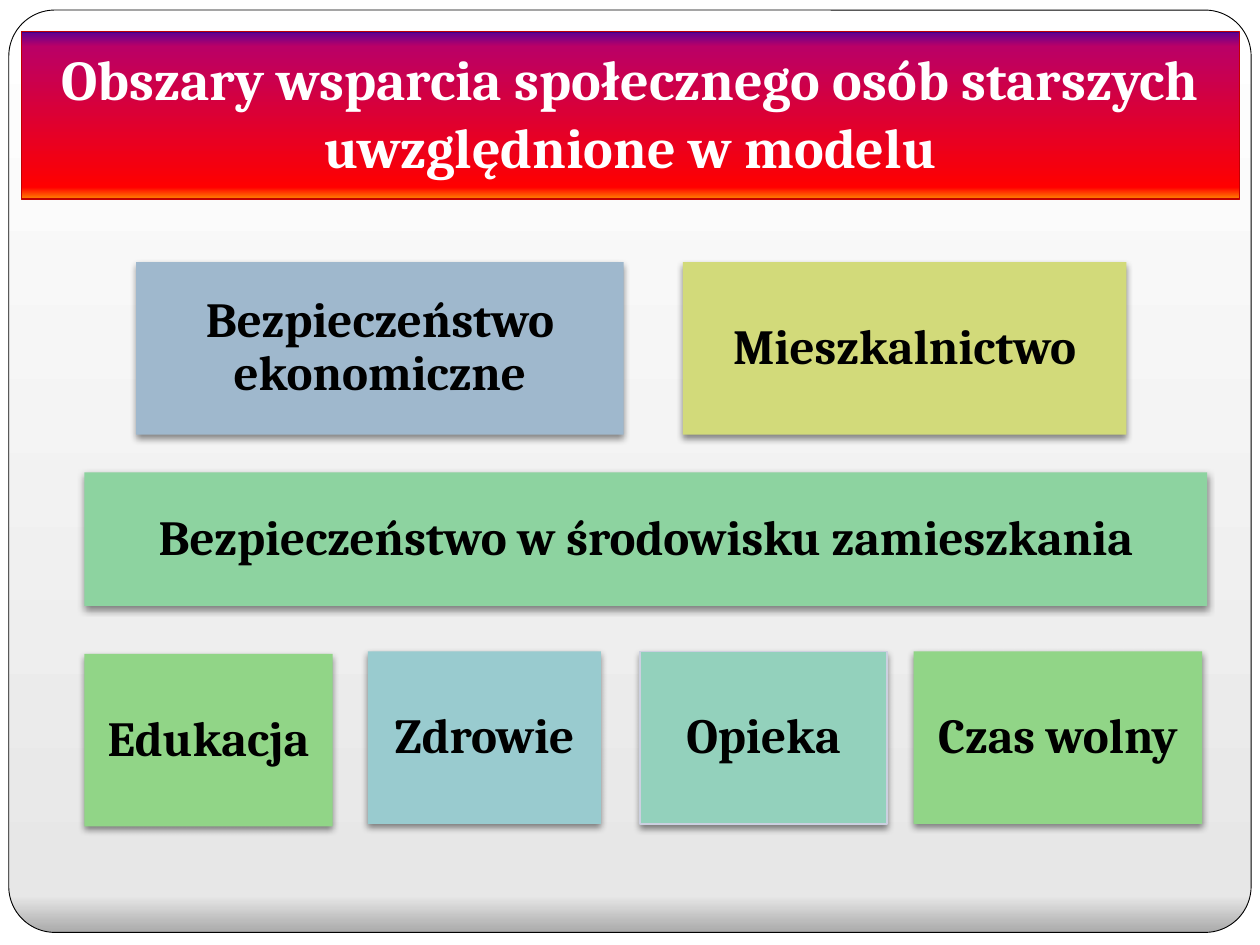
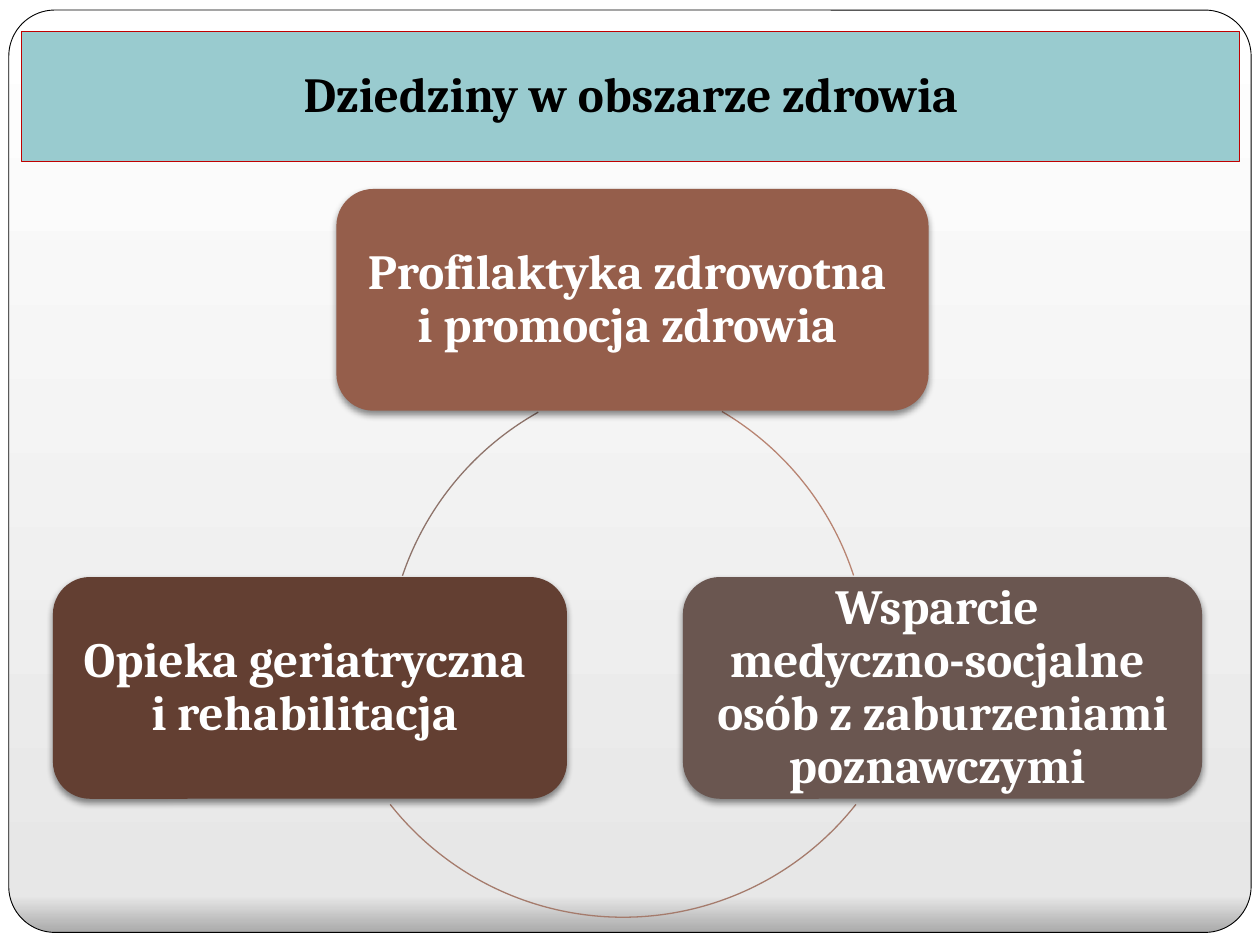
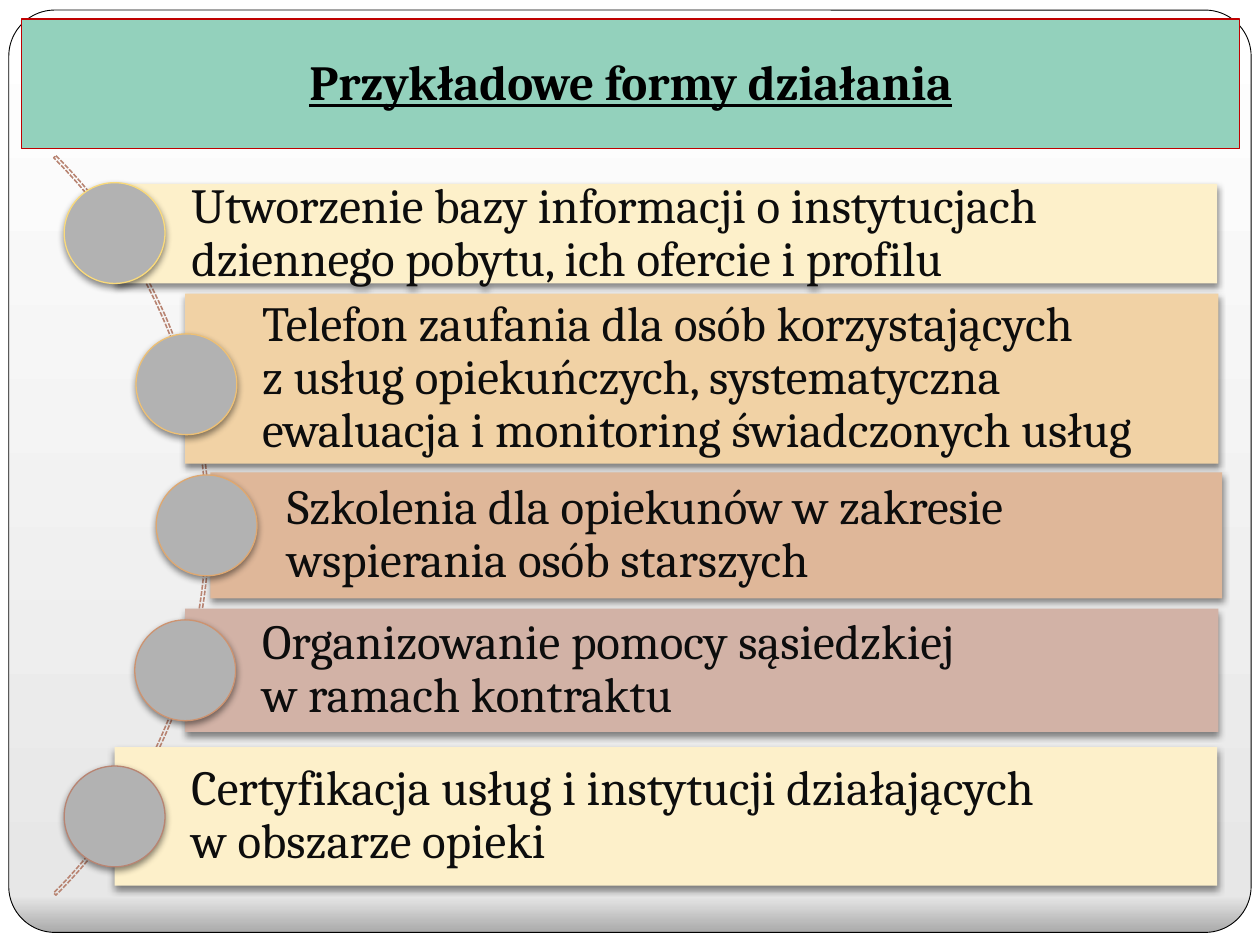
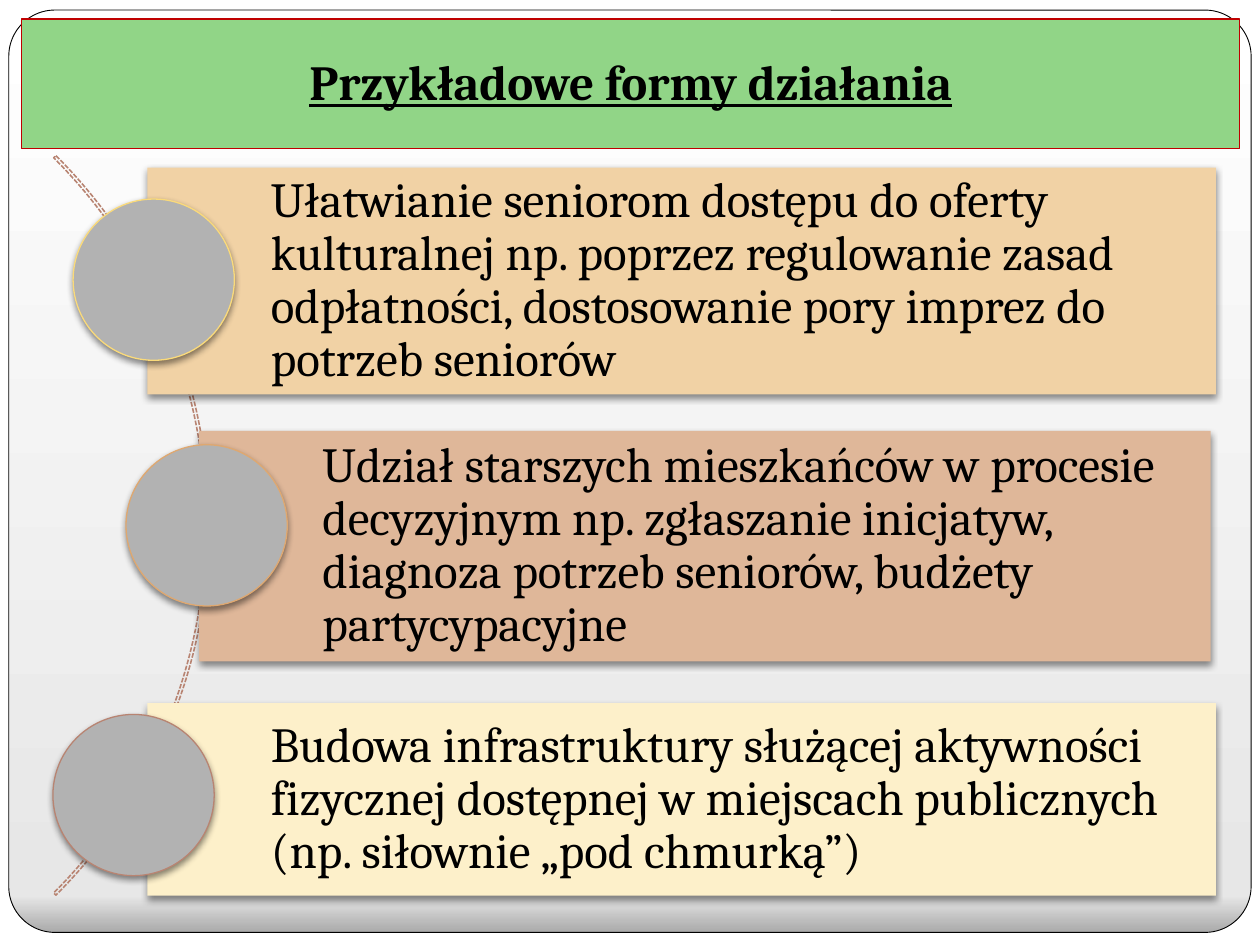
from dataclasses import dataclass
from typing import NamedTuple, Optional, Union

from lxml.etree import SubElement
from pptx import Presentation
from pptx.dml.color import RGBColor
from pptx.enum.dml import MSO_LINE_DASH_STYLE as Dash
from pptx.enum.shapes import MSO_SHAPE as Preset
from pptx.enum.text import MSO_ANCHOR as Anchor, MSO_AUTO_SIZE as AutoSize, PP_ALIGN as Align
from pptx.oxml.ns import qn
from pptx.util import Emu, Pt

# Shared scale, font and colours
EMU_PER_PX = 9144  # 100 px to the inch
FONT = "Cambria"
BLACK, WHITE, INK = "000000", "FFFFFF", "0D0D0D"
BLUE, TEAL, MINT, GREEN = "9FB8CD", "99CBCF", "93D1BC", "91D587"
OLIVE, SEA = "D2DA7A", "8DD3A0"
CREAM, SAND, CLAY, ROSE = "FDF0CA", "F1D2A5", "DFB799", "D2B2A6"
GREY, YELLOW, ORANGE, COPPER = "B2B2B2", "FADA7A", "DFA870", "B88472"


class Box(NamedTuple):
    left: int
    top: int
    width: int
    height: int


class Gradient(NamedTuple):
    stops: tuple
    angle: int  # counterclockwise, in degrees


class Border(NamedTuple):
    color: str
    points: float = 0.75


class Insets(NamedTuple):
    left: int
    top: int
    right: int
    bottom: int


Paint = Union[str, Gradient]
PAPER = Gradient(((0, "AAAAAA"), (4, "E7E7E7"), (100, WHITE)), 90)
SUNSET = Gradient(((0, "000082"), (1, "66008F"), (9, "BA0066"),
                   (93, "FF0000"), (100, "FF8200")), 270)
TITLE_BORDER = Border("C00000")
TITLE_INSETS = Insets(10, 5, 10, 10)
CARD_INSETS = Insets(12, 12, 12, 12)


@dataclass(frozen=True)
class TextStyle:
    color: str = BLACK
    size: int = 28
    bold: bool = True
    underline: bool = False
    align: Align = Align.CENTER
    spacing: Optional[float] = None


@dataclass(frozen=True)
class Card:
    box: Box
    fill: str
    text: str
    border: Optional[Border] = None


@dataclass(frozen=True)
class Arc:
    left: int
    top: int
    start: float
    end: float
    color: str


@dataclass(frozen=True)
class Step:
    band: Box
    fill: str
    dot_left: int
    dot_top: int
    dot_color: str
    text: str


TITLE_DARK = TextStyle()
TITLE_UNDERLINED = TextStyle(underline=True)
CARD_DARK = TextStyle(spacing=0.9)
CARD_LIGHT = TextStyle(color=WHITE, spacing=0.9)


# Basic helpers
def px(value: int) -> Emu:
    return Emu(value * EMU_PER_PX)


def rgb(value: str) -> RGBColor:
    return RGBColor.from_string(value)


def set_fill(fill, element, paint: Optional[Paint]) -> None:
    """Fill with a plain colour, a gradient or nothing."""
    if paint is None:
        fill.background()
    elif isinstance(paint, Gradient):
        fill.gradient()
        fill.gradient_angle = paint.angle
        stop_list = element.find(".//" + qn("a:gsLst"))
        del stop_list[:]
        for percent, color in paint.stops:
            stop = SubElement(stop_list, qn("a:gs"), pos=str(percent * 1000))
            SubElement(stop, qn("a:srgbClr"), val=color)
    else:
        fill.solid()
        fill.fore_color.rgb = rgb(paint)


def set_border(shape, border: Optional[Border]) -> None:
    if border is None:
        shape.line.fill.background()
    else:
        shape.line.color.rgb = rgb(border.color)
        shape.line.width = Pt(border.points)


def add_shadow(shape) -> None:
    effects = shape.element.spPr.find(qn("a:effectLst"))
    shadow = SubElement(effects, qn("a:outerShdw"), blurRad=str(Pt(4)), dist=str(Pt(2)),
                        dir="5400000", algn="ctr", rotWithShape="0")
    color = SubElement(shadow, qn("a:srgbClr"), val=BLACK)
    SubElement(color, qn("a:alpha"), val="45000")


def add_preset(page, preset: Preset, box: Box, fill: Optional[Paint],
               border: Optional[Border] = None, shadow: bool = False):
    shape = page.shapes.add_shape(preset, *map(px, box))
    shape.shadow.inherit = False
    set_fill(shape.fill, shape.element, fill)
    set_border(shape, border)
    if shadow:
        add_shadow(shape)
    return shape


def write_text(shape, text: str, style: TextStyle, insets: Insets) -> None:
    frame = shape.text_frame
    frame.word_wrap = True
    frame.auto_size = AutoSize.NONE
    frame.vertical_anchor = Anchor.MIDDLE
    frame.margin_left, frame.margin_top, frame.margin_right, frame.margin_bottom = map(px, insets)
    para = frame.paragraphs[0]
    para.alignment = style.align
    if style.spacing:
        para.line_spacing = style.spacing
    for index, line in enumerate(text.split("\n")):
        if index:
            para.add_line_break()
        span = para.add_run()
        span.text = line
        span.font.name = FONT
        span.font.size = Pt(style.size)
        span.font.bold = style.bold
        span.font.underline = style.underline
        span.font.color.rgb = rgb(style.color)


# Parts of the slides
def add_page(deck, title: str, top: int, height: int, fill: Paint, style: TextStyle):
    page = deck.slides.add_slide(deck.slide_layouts[5])
    band = page.shapes.title
    band.left, band.top, band.width, band.height = map(px, Box(17, top, 967, height))
    set_fill(band.fill, band.element, fill)
    set_border(band, TITLE_BORDER)
    write_text(band, title, style, TITLE_INSETS)
    return page


def dress_master(deck, page) -> None:
    """Draw the paper and its rounded frame, then move them to the master."""
    master = deck.slide_master
    set_fill(master.background.fill, master.element, PAPER)
    backdrop = add_preset(page, Preset.RECTANGLE, Box(0, 0, 1000, 750), WHITE)
    frame = add_preset(page, Preset.ROUNDED_RECTANGLE, Box(7, 8, 986, 732), PAPER,
                       Border(BLACK, 0.5))
    frame.adjustments[0] = 0.05
    for index, shape in enumerate((backdrop, frame)):
        shape.element.find(".//" + qn("p:cNvPr")).set("id", str(20 + index))
        master.shapes.element.insert(2 + index, shape.element)


def add_card(page, preset: Preset, card: Card, style: TextStyle) -> None:
    shape = add_preset(page, preset, card.box, card.fill, card.border, shadow=True)
    write_text(shape, card.text, style, CARD_INSETS)


def add_arc(page, arc: Arc) -> None:
    shape = add_preset(page, Preset.ARC, Box(arc.left, arc.top, 471, 471), None,
                       Border(arc.color))
    for index, degrees in enumerate((arc.start, arc.end)):
        shape.adjustments[index] = degrees * 0.6


def add_steps(page, steps: list, dot_size: int, text_left: int, color: str) -> None:
    """Draw a dashed curve with a band and a dot for each step."""
    curve = add_preset(page, Preset.BLOCK_ARC, Box(-664, 2, 830, 830), None, Border(COPPER, 0.9))
    curve.line.dash_style = Dash.SQUARE_DOT
    for index, value in enumerate((189, 27, 0.003)):
        curve.adjustments[index] = value
    style = TextStyle(color=color, bold=False, align=Align.LEFT, spacing=0.9)
    for step in steps:
        band = add_preset(page, Preset.RECTANGLE, step.band, step.fill, shadow=True)
        write_text(band, step.text, style, Insets(text_left, 8, 8, 8))
        add_preset(page, Preset.OVAL, Box(step.dot_left, step.dot_top, dot_size, dot_size),
                   GREY, Border(step.dot_color), shadow=True)


# Slide contents
AREAS = [
    Card(Box(108, 208, 387, 137), BLUE, "Bezpieczeństwo ekonomiczne"),
    Card(Box(292, 517, 185, 137), TEAL, "Zdrowie"),
    Card(Box(508, 517, 196, 137), MINT, "Opieka", Border("CCD0E0")),
    Card(Box(725, 517, 229, 137), GREEN, "Czas wolny"),
    Card(Box(67, 519, 197, 137), GREEN, "Edukacja"),
    Card(Box(542, 208, 352, 137), OLIVE, "Mieszkalnictwo"),
    Card(Box(67, 375, 891, 106), SEA, "Bezpieczeństwo w środowisku zamieszkania"),
]
HEALTH_ARCS = [
    Arc(218, 294, 300.5, 342, COPPER),
    Arc(259, 257, 38.3, 141.7, "A57B6C"),
    Arc(307, 297, 198.7, 240.7, "8E736A"),
]
HEALTH_FIELDS = [
    Card(Box(267, 150, 470, 176), "955E4B", "Profilaktyka zdrowotna \ni promocja zdrowia "),
    Card(Box(542, 458, 412, 176), "6A5650",
         "Wsparcie \nmedyczno-socjalne \nosób z zaburzeniami poznawczymi "),
    Card(Box(42, 458, 408, 176), "633F32", "Opieka geriatryczna \ni rehabilitacja "),
]
CARE_STEPS = [
    Step(Box(91, 146, 875, 79), CREAM, 51, 145, YELLOW,
         "Utworzenie bazy informacji o instytucjach dziennego pobytu, ich ofercie i profilu"),
    Step(Box(147, 233, 820, 135), SAND, 108, 265, "EEC074",
         "Telefon zaufania dla osób korzystających \n"
         "z usług opiekuńczych, systematyczna ewaluacja i monitoring świadczonych usług"),
    Step(Box(167, 375, 803, 100), CLAY, 124, 377, ORANGE,
         "Szkolenia dla opiekunów w zakresie wspierania osób starszych"),
    Step(Box(147, 483, 820, 98), ROSE, 107, 492, "CD9370",
         "Organizowanie pomocy sąsiedzkiej \nw ramach kontraktu"),
    Step(Box(91, 593, 875, 110), CREAM, 51, 608, COPPER,
         "Certyfikacja usług i instytucji działających \nw obszarze opieki"),
]
LEISURE_STEPS = [
    Step(Box(117, 133, 848, 180), SAND, 58, 158, YELLOW,
         "Ułatwianie seniorom dostępu do oferty kulturalnej np. poprzez regulowanie zasad "
         "odpłatności, dostosowanie pory imprez do potrzeb seniorów"),
    Step(Box(158, 342, 803, 183), CLAY, 100, 353, ORANGE,
         "Udział starszych mieszkańców w procesie decyzyjnym np. zgłaszanie inicjatyw, "
         "diagnoza potrzeb seniorów, budżety partycypacyjne"),
    Step(Box(117, 558, 848, 153), CREAM, 42, 567, COPPER,
         "Budowa infrastruktury służącej aktywności fizycznej dostępnej w miejscach "
         "publicznych (np. siłownie „pod chmurką”)"),
]


def main() -> None:
    deck = Presentation()
    deck.slide_width, deck.slide_height = px(1000), px(750)

    # Areas of support
    page = add_page(deck, "Obszary wsparcia społecznego osób starszych uwzględnione w modelu",
                    25, 133, SUNSET, TextStyle(color=WHITE, size=32))
    dress_master(deck, page)
    for area in AREAS:
        add_card(page, Preset.RECTANGLE, area, CARD_DARK)

    # Fields of health, joined in a ring
    page = add_page(deck, "Dziedziny w obszarze zdrowia", 25, 103, TEAL, TITLE_DARK)
    for arc in HEALTH_ARCS:
        add_arc(page, arc)
    for field in HEALTH_FIELDS:
        add_card(page, Preset.ROUNDED_RECTANGLE, field, CARD_LIGHT)

    # Examples of action: care, then leisure
    for fill, steps, dot_size, text_left, color in (
            (MINT, CARE_STEPS, 80, 61, INK),
            (GREEN, LEISURE_STEPS, 128, 98, BLACK)):
        page = add_page(deck, "Przykładowe formy działania", 15, 103, fill, TITLE_UNDERLINED)
        add_steps(page, steps, dot_size, text_left, color)

    deck.save("out.pptx")


if __name__ == "__main__":
    main()
